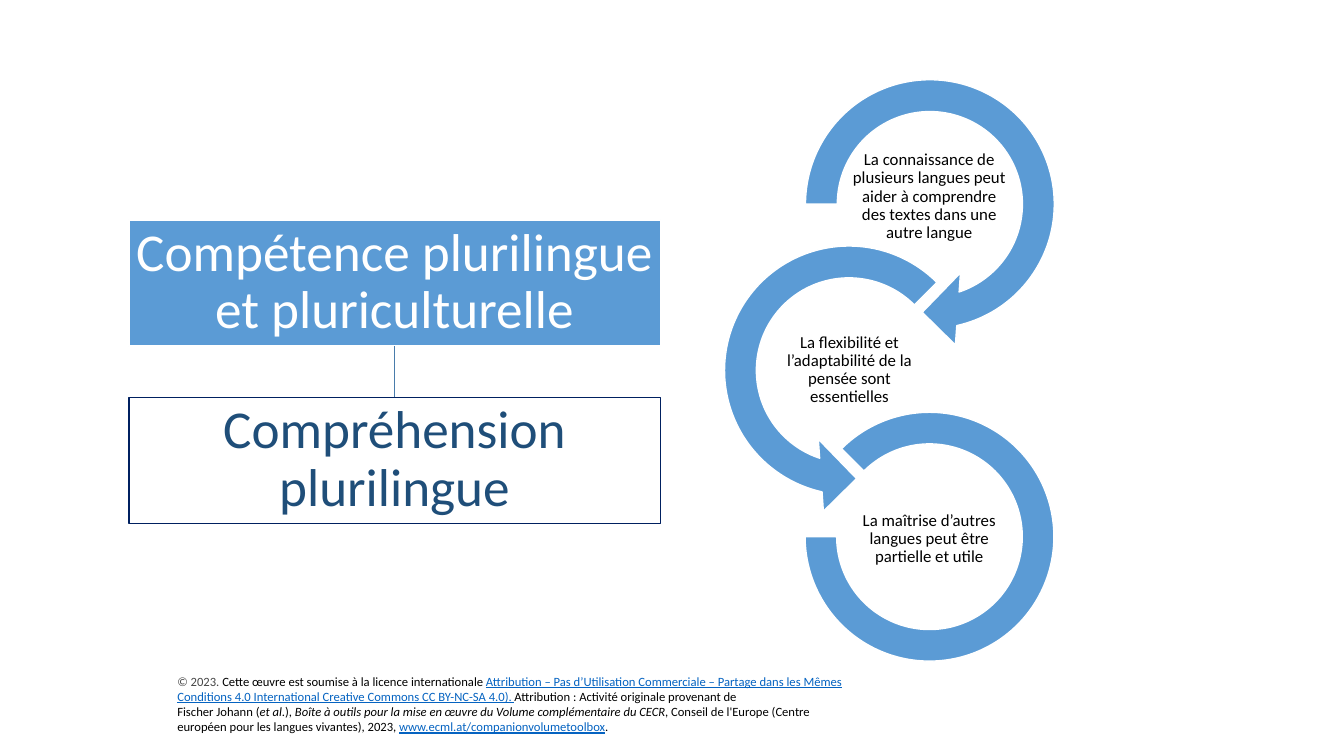
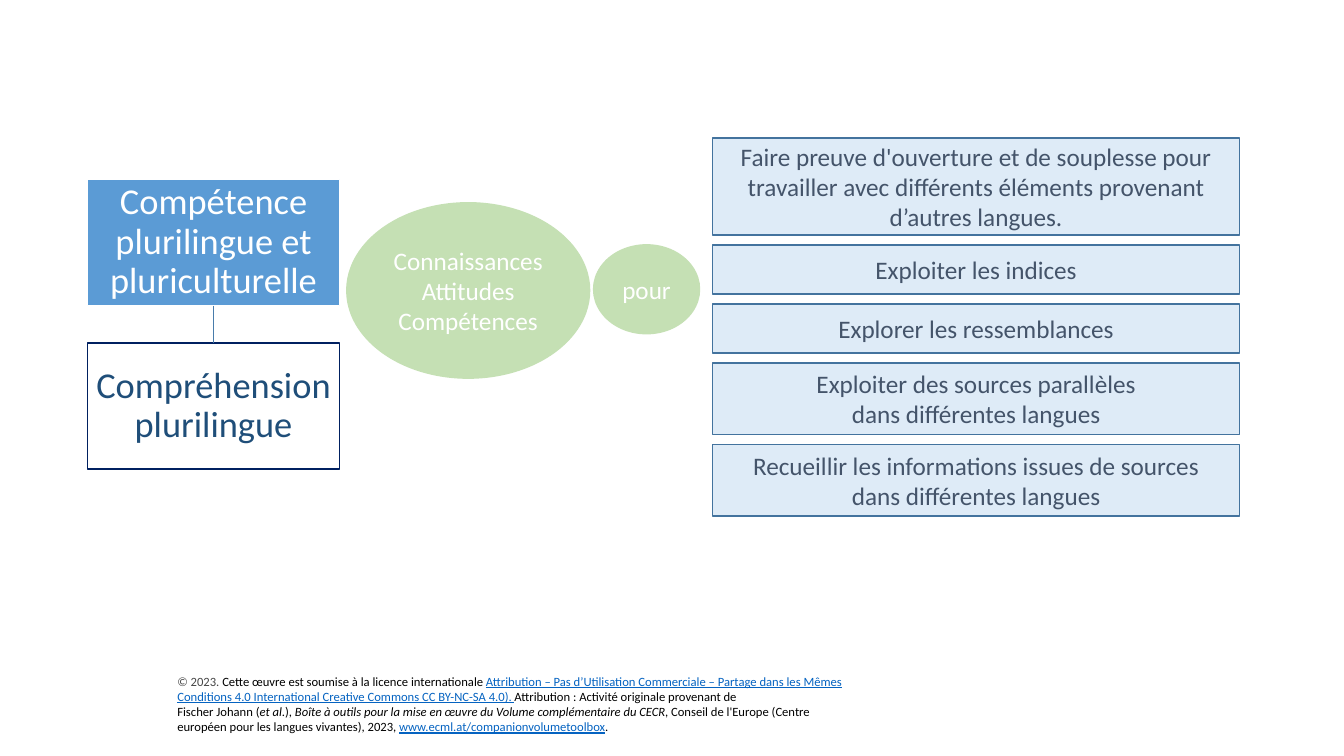
from pptx import Presentation
from pptx.dml.color import RGBColor
from pptx.enum.shapes import MSO_CONNECTOR, MSO_SHAPE
from pptx.enum.text import MSO_ANCHOR, MSO_AUTO_SIZE, PP_ALIGN
from pptx.oxml.ns import qn
from pptx.util import Cm, Pt
from lxml import etree

CENTER, LEFT = PP_ALIGN.CENTER, PP_ALIGN.LEFT
MIDDLE = MSO_ANCHOR.MIDDLE
FIXED_SIZE = MSO_AUTO_SIZE.NONE
RECTANGLE, OVAL = MSO_SHAPE.RECTANGLE, MSO_SHAPE.OVAL
ARROW, LEFT_ARROW = MSO_SHAPE.CIRCULAR_ARROW, MSO_SHAPE.LEFT_CIRCULAR_ARROW
BLOCK_ARC = MSO_SHAPE.BLOCK_ARC
STRAIGHT = MSO_CONNECTOR.STRAIGHT
TITLE_ONLY = 5
BOTTOM_SITE, TOP_SITE = 2, 0

FONT = "Calibri"
COLORS = {
    "white": "FFFFFF", "black": "000000", "gray": "464646",
    "blue": "5B9BD5", "pale blue": "DEEBF7", "steel": "43739E",
    "connector": "497CAB", "navy": "002060", "dark blue": "1F4E79",
    "slate": "44546A", "green": "C5E0B4", "link": "0563C1",
}

# Each footer paragraph is a list of (text, style) parts
FOOTER = [
    [("© 2023. ", "gray"),
     ("Cette œuvre est soumise à la licence internationale ", "plain"),
     ("Attribution – Pas d’Utilisation Commerciale – Partage dans les Mêmes "
      "Conditions 4.0 International Creative Commons CC BY-NC-SA 4.0). ", "link"),
     ("Attribution : Activité originale provenant de", "plain")],
    [("Fischer Johann (", "plain"), ("et al.", "italic"), ("), ", "plain"),
     ("Boîte à outils pour la mise en œuvre du Volume complémentaire du CECR", "italic"),
     (", Conseil de l'Europe (Centre européen pour les langues vivantes), 2023, ", "plain"),
     ("www.ecml.at/companionvolumetoolbox", "link"), (".", "plain")],
]

# Shape, left, top, size, adjustments, caption left, caption top, caption
CYCLE = [
    (ARROW, 19.79, 1.5, 7.29, (0.11, 11.42, 45, 108, 0.125), 21.39, 3.94,
     "La connaissance de plusieurs langues peut aider à comprendre des textes "
     "dans une autre langue"),
    (LEFT_ARROW, 17.75, 5.69, 7.29, (0.11, 11.42, 63, 189, 0.125), 19.38, 8.31,
     "La flexibilité et l’adaptabilité de la pensée sont essentielles"),
    (BLOCK_ARC, 20.29, 10.39, 6.27, (135, 108, 0.127), 21.39, 12.57,
     "La maîtrise d’autres langues peut être partielle et utile"),
]

# Height and text of each objective
OBJECTIVES = [
    (2.44, "Faire preuve d'ouverture et de souplesse pour travailler avec "
           "différents éléments provenant d’autres langues."),
    (1.24, "Exploiter les indices"),
    (1.24, "Explorer les ressemblances"),
    (1.8, "Exploiter des sources parallèles\vdans différentes langues"),
    (1.8, "Recueillir les informations issues de sources\vdans différentes langues"),
]


def color(name):
    return RGBColor.from_string(COLORS[name])


class Deck:
    def __init__(self):
        self.presentation = Presentation()
        self.presentation.slide_width = Cm(33.87)
        self.presentation.slide_height = Cm(19.05)
        self.slide = None

    def new_slide(self):
        layout = self.presentation.slide_layouts[TITLE_ONLY]
        self.slide = self.presentation.slides.add_slide(layout)
        self.footer()

    def paint(self, shape, fill, line):
        shape.fill.solid()
        shape.fill.fore_color.rgb = color(fill)
        shape.line.color.rgb = color(line)
        shape.line.width = Pt(1)

    def frame(self, shape, margin=None):
        text_frame = shape.text_frame
        text_frame.word_wrap = True
        text_frame.auto_size = FIXED_SIZE
        text_frame.vertical_anchor = MIDDLE
        if margin is not None:
            text_frame.margin_left = text_frame.margin_right = Cm(margin)
            text_frame.margin_top = text_frame.margin_bottom = Cm(margin)
        return text_frame

    def style_run(self, run, size, text_color):
        run.font.name = FONT
        run.font.size = Pt(size)
        run.font.color.rgb = color(text_color)

    def set_text(self, shape, text, size, text_color, margin=None, spacing=1.0):
        text_frame = self.frame(shape, margin)
        text_frame.text = text
        for paragraph in text_frame.paragraphs:
            paragraph.alignment = CENTER
            paragraph.line_spacing = spacing
            for run in paragraph.runs:
                self.style_run(run, size, text_color)

    def shape(self, kind, left, top, width, height, fill, line):
        shape = self.slide.shapes.add_shape(
            kind, Cm(left), Cm(top), Cm(width), Cm(height))
        shape.shadow.inherit = False
        self.paint(shape, fill, line)
        return shape

    def title(self, left, top, width, height, text, size):
        title = self.slide.shapes.title
        title.left, title.top = Cm(left), Cm(top)
        title.width, title.height = Cm(width), Cm(height)
        self.paint(title, "blue", "white")
        self.set_text(title, text, size, "white", 0.05, 0.9)
        return title

    def caption(self, left, top, text):
        box = self.slide.shapes.add_textbox(Cm(left), Cm(top), Cm(4.06), Cm(2.03))
        self.set_text(box, text, 12, "black", 0.03, 0.9)

    def connect(self, upper, lower):
        connector = self.slide.shapes.add_connector(STRAIGHT, 0, 0, 0, 0)
        connector.begin_connect(upper, BOTTOM_SITE)
        connector.end_connect(lower, TOP_SITE)
        connector.line.color.rgb = color("connector")
        connector.line.width = Pt(1)
        etree.SubElement(connector._element.spPr, qn("a:effectLst"))

    def hierarchy(self, left, top, lower_top, width, size):
        upper = self.title(left, top, width, 3.18,
                           "Compétence plurilingue et pluriculturelle", size)
        lower = self.shape(RECTANGLE, left, lower_top, width, 3.18, "white", "navy")
        self.set_text(lower, "Compréhension plurilingue", size, "dark blue", 0.05, 0.9)
        self.connect(upper, lower)

    def footer(self):
        box = self.slide.shapes.add_textbox(Cm(4.22), Cm(16.84), Cm(17.4), Cm(1.8))
        text_frame = self.frame(box)
        for index, parts in enumerate(FOOTER):
            paragraph = text_frame.add_paragraph() if index else text_frame.paragraphs[0]
            paragraph.alignment = LEFT
            for text, style in parts:
                run = paragraph.add_run()
                run.text = text
                self.style_run(run, 9, style if style in COLORS else "black")
                run.font.underline = style == "link"
                run.font.italic = style == "italic"


def main():
    deck = Deck()

    # Slide 1: competence and its cycle of principles
    deck.new_slide()
    deck.hierarchy(3.25, 5.54, 10.01, 13.39, 38)
    for kind, left, top, size, adjustments, text_left, text_top, text in CYCLE:
        arc = deck.shape(kind, left, top, size, size, "blue", "white")
        for index, value in enumerate(adjustments):
            arc.adjustments[index] = value
        deck.caption(text_left, text_top, text)

    # Slide 2: competence and its objectives
    deck.new_slide()
    deck.hierarchy(2.21, 4.52, 8.64, 6.35, 26)
    top = 3.48
    for height, text in OBJECTIVES:
        box = deck.shape(RECTANGLE, 17.96, top, 13.28, height, "pale blue", "steel")
        deck.set_text(box, text, 18, "slate")
        top += height + 0.25

    # Link between competence and objectives
    resources = deck.shape(OVAL, 8.74, 5.11, 6.12, 4.42, "green", "green")
    deck.set_text(resources, "Connaissances\nAttitudes\nCompétences", 18, "white")
    purpose = deck.shape(OVAL, 14.96, 6.17, 2.67, 2.24, "green", "green")
    deck.set_text(purpose, "pour", 18, "white")

    deck.presentation.save("out.pptx")


if __name__ == "__main__":
    main()
